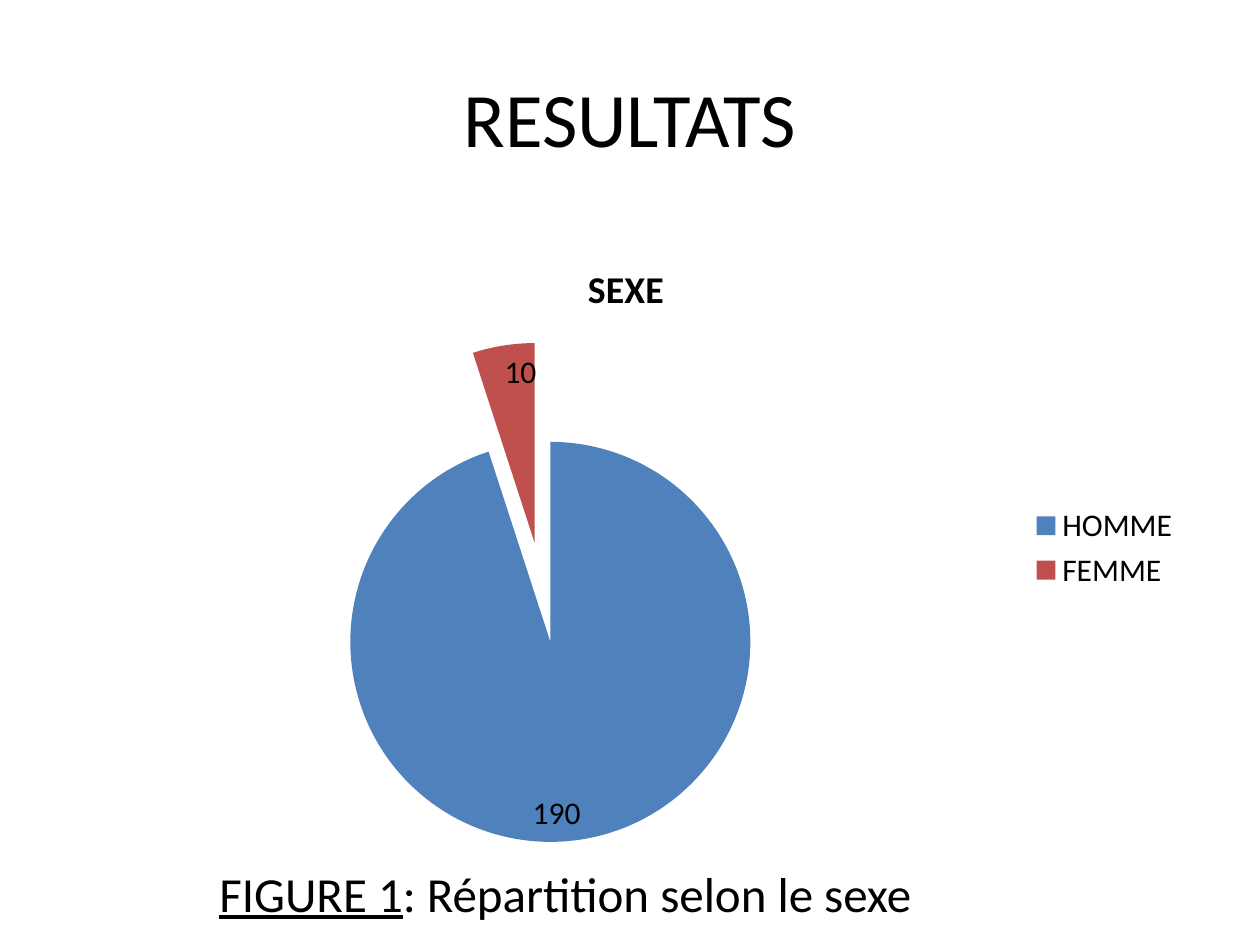
"""Build the results slide: a pie chart of the split by sex, with its caption."""
import pptx
import pptx.chart.data
import pptx.dml.color
import pptx.enum.chart
import pptx.enum.text
import pptx.oxml
import pptx.oxml.ns
import pptx.util

FONT = "Calibri"
BLACK = pptx.dml.color.RGBColor(0x00, 0x00, 0x00)
BLUE = pptx.dml.color.RGBColor(0x4F, 0x81, 0xBD)
RED = pptx.dml.color.RGBColor(0xC0, 0x50, 0x4D)

HEADING = "RESULTATS"
CHART_TITLE = "SEXE"
SLICES = [("HOMME", 190, BLUE), ("FEMME", 10, RED)]
EXPLOSION = 25
CAPTION = [("FIGURE 1", True), (": Répartition selon le sexe", False)]

SLIDE_SIZE = (1260, 945)
HEADING_BOX = (63, 38, 1134, 157)
CHART_BOX = (59, 236, 1134, 624)
CAPTION_BOX = (207, 857, 1014, 72)


def px(*lengths):
    return [round(length * pptx.util.Inches(1) / 126) for length in lengths]


def style(font, size, bold=False, underline=False):
    font.name = FONT
    font.size = pptx.util.Pt(size)
    font.bold = bold
    font.underline = underline
    font.color.rgb = BLACK


def add_heading(slide):
    heading = slide.shapes.title
    heading.left, heading.top, heading.width, heading.height = px(*HEADING_BOX)
    heading.text_frame.vertical_anchor = pptx.enum.text.MSO_ANCHOR.MIDDLE
    paragraph = heading.text_frame.paragraphs[0]
    paragraph.alignment = pptx.enum.text.PP_ALIGN.CENTER
    run = paragraph.add_run()
    run.text = HEADING
    style(run.font, 44)


def add_pie(slide):
    names, counts, colours = zip(*SLICES)
    sexes = pptx.chart.data.CategoryChartData()
    sexes.categories = names
    sexes.add_series(CHART_TITLE, counts)
    pie = slide.shapes.add_chart(
        pptx.enum.chart.XL_CHART_TYPE.PIE, *px(*CHART_BOX), sexes
    ).chart
    style(pie.font, 18)

    pie.has_title = True
    run = pie.chart_title.text_frame.paragraphs[0].add_run()
    run.text = CHART_TITLE
    style(run.font, 21.6, bold=True)

    pie.has_legend = True
    pie.legend.position = pptx.enum.chart.XL_LEGEND_POSITION.RIGHT
    pie.legend.include_in_layout = False

    plot = pie.plots[0]
    plot.vary_by_categories = True
    series = plot.series[0]
    for index, colour in enumerate(colours):
        fill = series.points[index].format.fill
        fill.solid()
        fill.fore_color.rgb = colour
    explosion = pptx.oxml.parse_xml(
        f'<c:explosion {pptx.oxml.ns.nsdecls("c")} val="{EXPLOSION}"/>'
    )
    series._element.find(pptx.oxml.ns.qn("c:dPt")).addprevious(explosion)

    labels = series.data_labels
    labels.show_value = True
    labels.position = pptx.enum.chart.XL_LABEL_POSITION.INSIDE_END
    style(labels.font, 18)


def add_caption(slide):
    frame = slide.shapes.add_textbox(*px(*CAPTION_BOX)).text_frame
    frame.word_wrap = True
    frame.auto_size = pptx.enum.text.MSO_AUTO_SIZE.SHAPE_TO_FIT_TEXT
    for text, underline in CAPTION:
        run = frame.paragraphs[0].add_run()
        run.text = text
        style(run.font, 28, underline=underline)


def main():
    deck = pptx.Presentation()
    deck.slide_width, deck.slide_height = px(*SLIDE_SIZE)
    slide = deck.slides.add_slide(deck.slide_layouts.get_by_name("Title Only"))
    add_heading(slide)
    add_pie(slide)
    add_caption(slide)
    deck.save("out.pptx")


if __name__ == "__main__":
    main()
